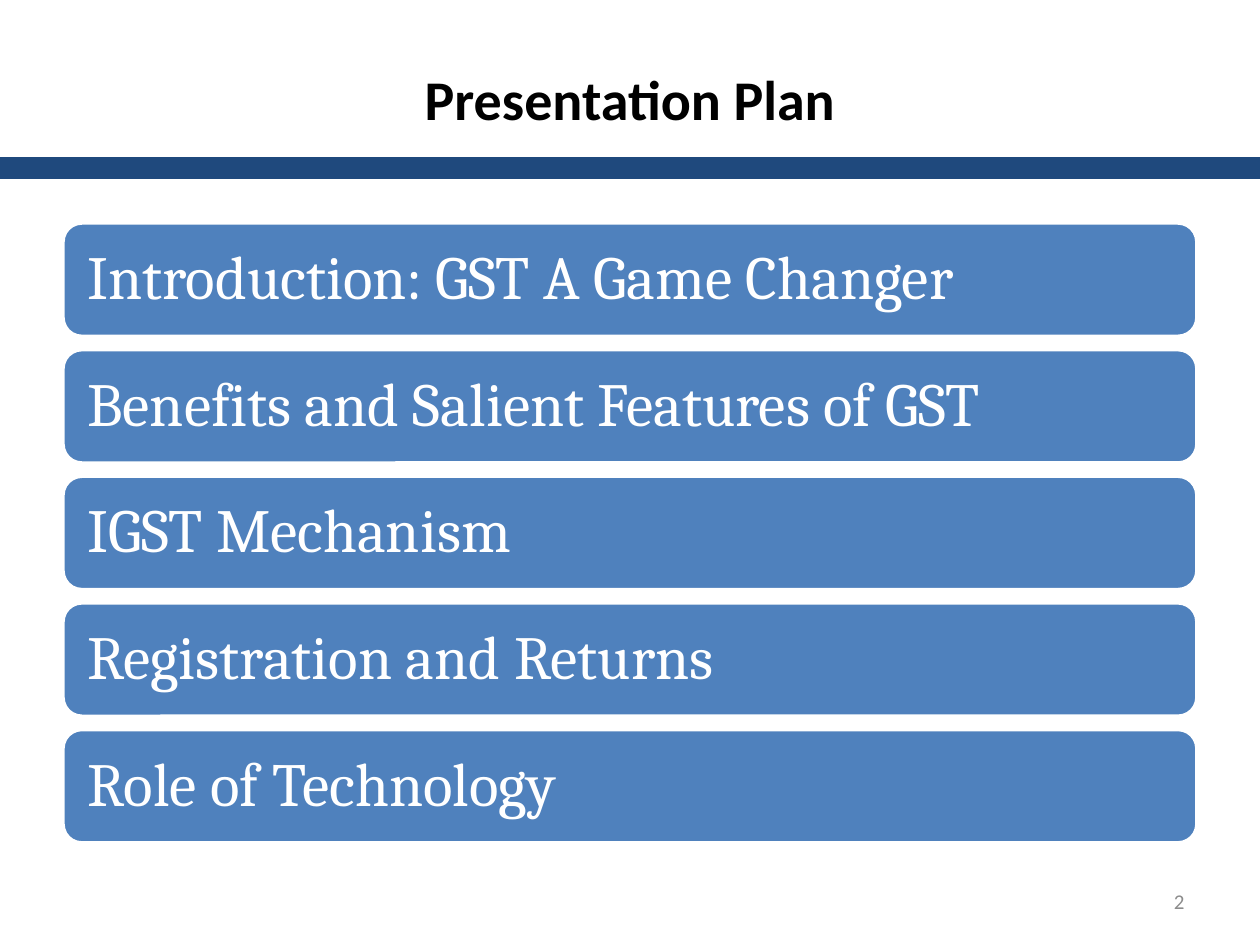
import dataclasses
import pptx
import pptx.dml.color
import pptx.enum.shapes
import pptx.enum.text
import pptx.util

Inches = pptx.util.Inches
Pt = pptx.util.Pt
Shape = pptx.enum.shapes.MSO_SHAPE
Align = pptx.enum.text.PP_ALIGN
Anchor = pptx.enum.text.MSO_ANCHOR


@dataclasses.dataclass
class Box:
    left: float
    top: float
    width: float
    height: float

    def place(self) -> tuple:
        return tuple(Inches(v) for v in (self.left, self.top, self.width, self.height))


@dataclasses.dataclass
class Style:
    face: str
    size: float
    color: str
    align: Align
    bold: bool = False


TOPICS = [
    "Introduction: GST A Game Changer",
    "Benefits and Salient Features of GST",
    "IGST Mechanism",
    "Registration and Returns",
    "Role of Technology",
]
FIRST = Box(0.5, 1.77, 9, 0.9)
STEP = 1.005
HEAD = Style("Calibri", 32, "000000", Align.CENTER, True)
TOPIC = Style("Cambria", 35, "FFFFFF", Align.LEFT)
NUMBER = Style("Calibri", 12, "8C8C8C", Align.RIGHT)


def rgb(code: str) -> pptx.dml.color.RGBColor:
    return pptx.dml.color.RGBColor.from_string(code)


def write(shape, text: str, style: Style) -> None:
    frame = shape.text_frame
    frame.text = text
    frame.word_wrap = True
    frame.vertical_anchor = Anchor.MIDDLE
    para = frame.paragraphs[0]
    para.alignment = style.align
    font = para.runs[0].font
    font.name = style.face
    font.size = Pt(style.size)
    font.bold = style.bold
    font.color.rgb = rgb(style.color)


def draw(slide, kind: Shape, box: Box, fill: str, line: str, width: float):
    shape = slide.shapes.add_shape(kind, *box.place())
    shape.shadow.inherit = False
    shape.fill.solid()
    shape.fill.fore_color.rgb = rgb(fill)
    shape.line.color.rgb = rgb(line)
    shape.line.width = Pt(width)
    return shape


def add_topic(slide, text: str, box: Box) -> None:
    shape = draw(slide, Shape.ROUNDED_RECTANGLE, box, "4F81BD", "FFFFFF", 2)
    write(shape, text, TOPIC)
    frame = shape.text_frame
    frame.margin_left = frame.margin_right = Inches(0.15)
    frame.margin_top = frame.margin_bottom = Inches(0.15)
    frame.paragraphs[0].line_spacing = 0.9


def main() -> None:
    deck = pptx.Presentation()
    deck.slide_width = Inches(10)
    deck.slide_height = Inches(7.5)
    slide = deck.slides.add_slide(deck.slide_layouts.get_by_name("Title Only"))

    draw(slide, Shape.RECTANGLE, Box(0, 1.25, 10, 0.17), "1F497D", "1F497D", 0.75)

    title = slide.shapes.title
    title.left, title.top, title.width, title.height = Box(0.5, 0.3, 9, 0.95).place()
    write(title, "Presentation Plan", HEAD)

    for row, text in enumerate(TOPICS):
        add_topic(slide, text, dataclasses.replace(FIRST, top=FIRST.top + row * STEP))

    number = slide.shapes.add_textbox(*Box(7.17, 6.95, 2.33, 0.4).place())
    write(number, "2", NUMBER)

    deck.save("out.pptx")


if __name__ == "__main__":
    main()
